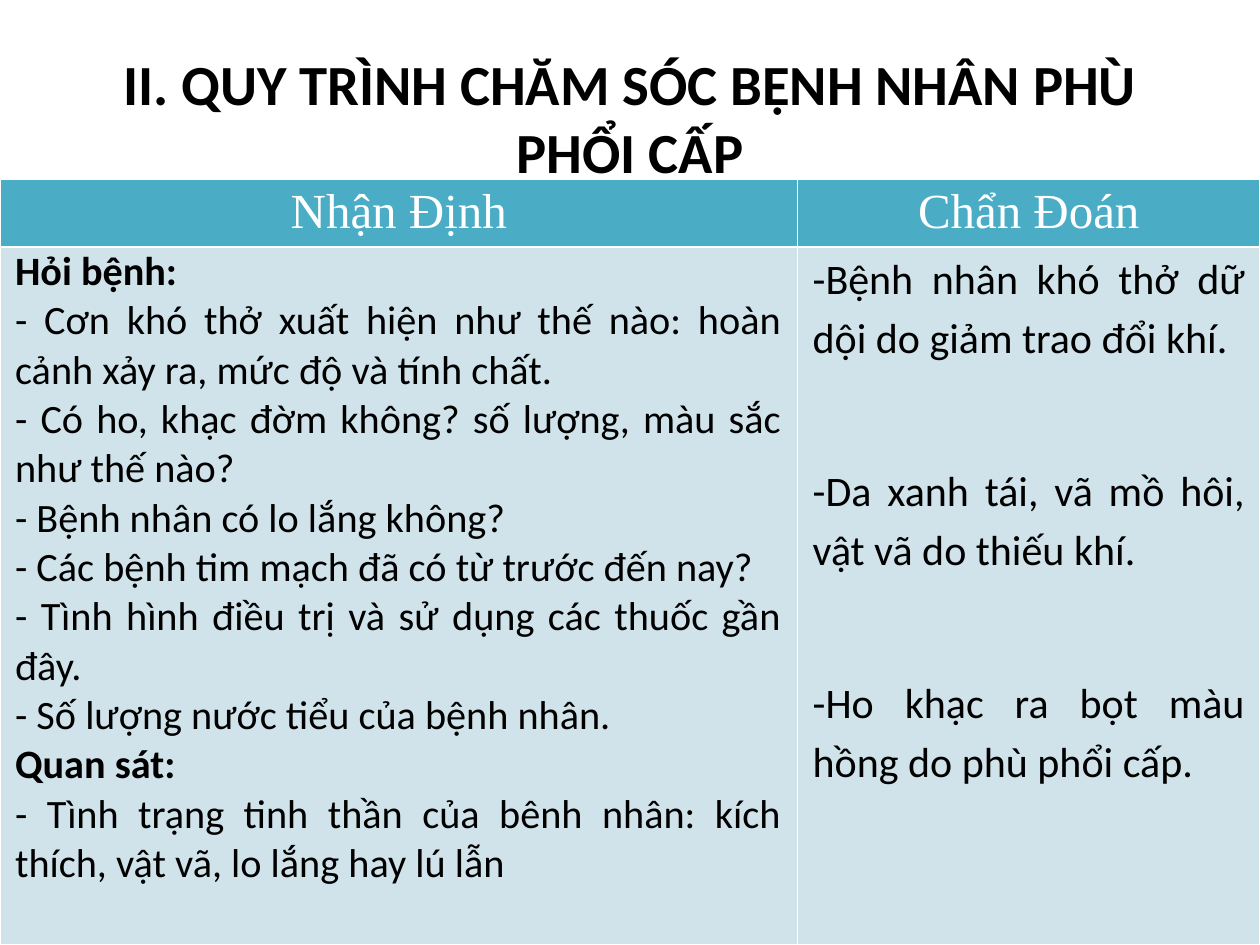
from lxml import etree
from pptx import Presentation
from pptx import util as u
from pptx.dml import color
from pptx.enum import text
from pptx.oxml import ns

COLORS = {"text": "000000", "light": "FFFFFF", "header": "4BACC6", "body": "D0E3EA"}
TITLE = "II. QUY TRÌNH CHĂM SÓC BỆNH NHÂN PHÙ PHỔI CẤP"
HEADERS = ["Nhận Định", "Chẩn Đoán"]
ASSESSMENT = [
    "Hỏi bệnh:",
    "- Cơn khó thở xuất hiện như thế nào: hoàn cảnh xảy ra, mức độ và tính chất.",
    "- Có ho, khạc đờm không? số lượng, màu sắc như thế nào?",
    "- Bệnh nhân có lo lắng không?",
    "- Các bệnh tim mạch đã có từ trước đến nay?",
    "- Tình hình điều trị và sử dụng các thuốc gần đây.",
    "- Số lượng nước tiểu của bệnh nhân.",
    "Quan sát:",
    "- Tình trạng tinh thần của bênh nhân: kích thích, vật vã, lo lắng hay lú lẫn",
]
DIAGNOSIS = [
    "-Bệnh nhân khó thở dữ dội do giảm trao đổi khí.",
    "-Da xanh tái, vã mồ hôi, vật vã do thiếu khí.",
    "-Ho khạc ra bọt màu hồng do phù phổi cấp.",
]


def rgb(name):
    """Return a named palette colour."""
    return color.RGBColor.from_string(COLORS[name])


def style_font(paragraph, name, size, color_name, bold=False):
    """Set the font of a whole paragraph."""
    font = paragraph.font
    font.name, font.size, font.bold = name, u.Pt(size), bold
    font.color.rgb = rgb(color_name)


def style_cell(cell, fill_name):
    """Fill a cell and give it thin white borders."""
    properties = cell._tc.get_or_add_tcPr()
    for side in ("lnL", "lnR", "lnT", "lnB"):
        line = etree.SubElement(properties, ns.qn(f"a:{side}"), w=str(u.Pt(1)))
        fill = etree.SubElement(line, ns.qn("a:solidFill"))
        etree.SubElement(fill, ns.qn("a:srgbClr"), val=COLORS["light"])
    cell.fill.solid()
    cell.fill.fore_color.rgb = rgb(fill_name)


def fill_header(cell, label):
    """Write one centred column heading."""
    style_cell(cell, "header")
    cell.text = label
    paragraph = cell.text_frame.paragraphs[0]
    paragraph.alignment = text.PP_ALIGN.CENTER
    style_font(paragraph, "Times New Roman", 28, "light")


def fill_body(cell, lines, size, line_spacing=1.0, gap=0):
    """Write justified lines, with bold for those that end in a colon."""
    style_cell(cell, "body")
    cell.margin_left = cell.margin_right = u.Inches(0.12)
    cell.margin_top = cell.margin_bottom = 0
    cell.text = "\n".join(lines)
    for paragraph in cell.text_frame.paragraphs:
        paragraph.alignment = text.PP_ALIGN.JUSTIFY
        paragraph.line_spacing = line_spacing
        paragraph.space_after = u.Pt(gap)
        style_font(paragraph, "Calibri", size, "text", paragraph.text.endswith(":"))


def place_title(slide, left, top, width, height):
    """Place the slide title in the given box."""
    title = slide.shapes.title
    title.left, title.top, title.width, title.height = left, top, width, height
    frame = title.text_frame
    frame.text = TITLE
    frame.auto_size = text.MSO_AUTO_SIZE.NONE
    frame.vertical_anchor = text.MSO_ANCHOR.MIDDLE
    paragraph = frame.paragraphs[0]
    paragraph.alignment = text.PP_ALIGN.CENTER
    style_font(paragraph, "Calibri", 32.4, "text", True)


def place_care_table(slide, left, top, width, height):
    """Place the assessment and diagnosis table in the given box."""
    table = slide.shapes.add_table(2, 2, left, top, width, height).table
    table.columns[0].width = u.Inches(6.33)
    table.columns[1].width = width - table.columns[0].width
    table.rows[0].height = u.Inches(0.54)
    table.rows[1].height = height - table.rows[0].height
    for column, label in enumerate(HEADERS):
        fill_header(table.cell(0, column), label)
    fill_body(table.cell(1, 0), ASSESSMENT, 23)
    fill_body(table.cell(1, 1), DIAGNOSIS, 24, line_spacing=1.15, gap=54)


def main():
    """Build and save the presentation."""
    presentation = Presentation()
    presentation.slide_width, presentation.slide_height = u.Inches(10), u.Inches(7.5)
    slide = presentation.slides.add_slide(presentation.slide_layouts[5])
    place_title(slide, u.Inches(0.5), u.Inches(0.3), u.Inches(9), u.Inches(1.25))
    place_care_table(slide, 0, u.Inches(1.42), u.Inches(10), u.Inches(6.08))
    presentation.save("out.pptx")


if __name__ == "__main__":
    main()
